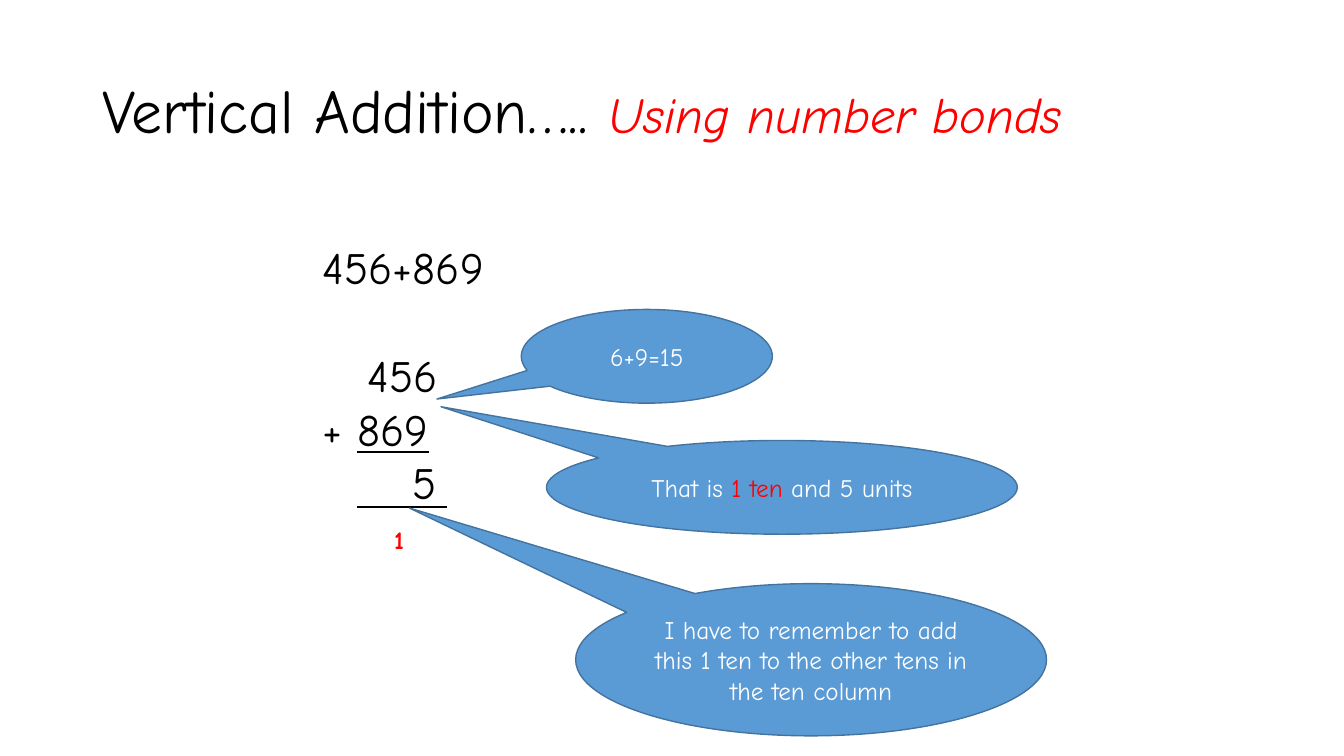
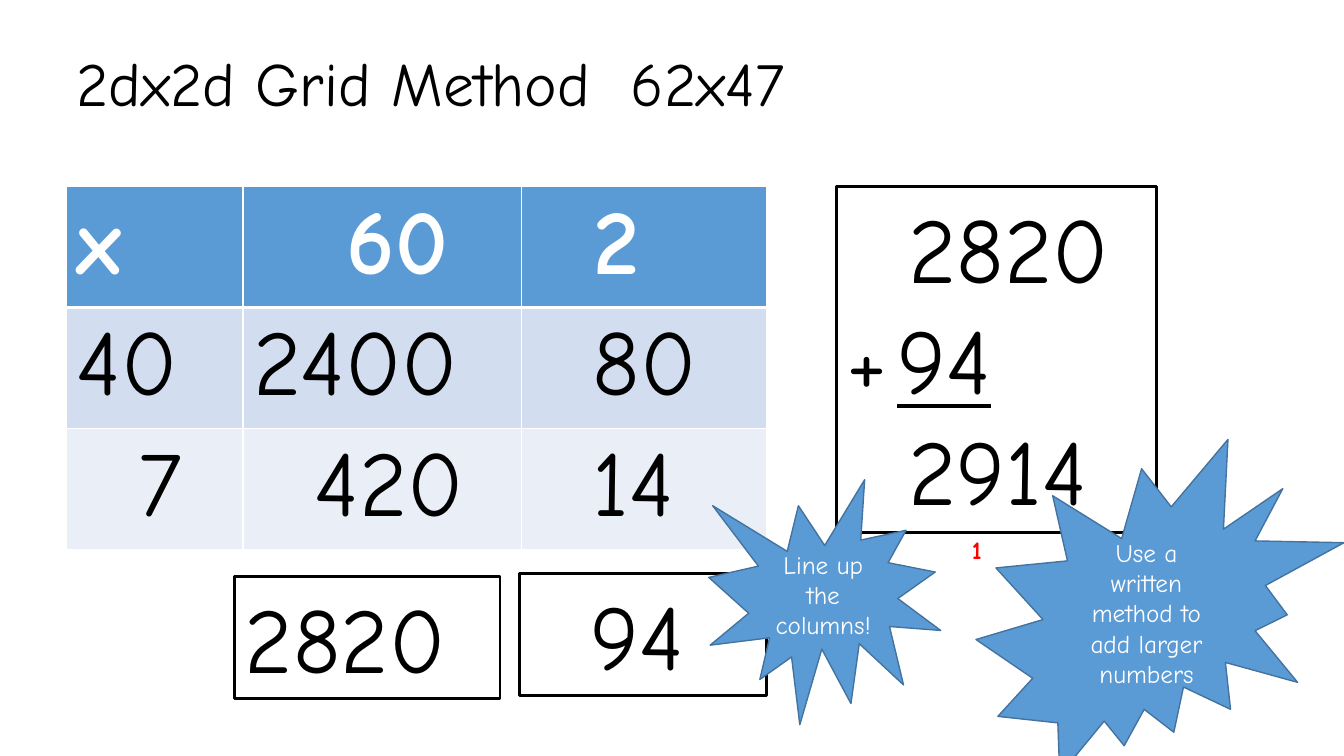
from dataclasses import dataclass

from lxml.etree import SubElement
from pptx import Presentation
from pptx.dml.color import RGBColor
from pptx.enum.shapes import MSO_CONNECTOR, MSO_SHAPE
from pptx.enum.text import MSO_ANCHOR, PP_ALIGN
from pptx.oxml.ns import qn
from pptx.util import Inches, Pt


@dataclass(frozen=True)
class Theme:
    font: str = "Comic Neue"
    black: str = "000000"
    white: str = "FFFFFF"
    red: str = "FF0000"
    blue: str = "5B9BD5"
    edge: str = "43739E"
    bands: tuple = ("5B9BD5", "D2DEEF", "EAEFF7")
    title: int = 44
    subtitle: int = 36
    sum: int = 32
    note: int = 18
    digits: int = 66


THEME = Theme()
STEP = 0.61

BONDS_TITLE = [
    "Vertical Addition….. ",
    ("Using number bonds", {"size": THEME.subtitle, "color": THEME.red, "italic": True}),
]
BONDS_SUM = [
    {"runs": ["456+869"]},
    {"runs": ["456"], "indent": 0.45, "before": 38.6},
    {"runs": ["+ ", ("869", {"underline": True})]},
    {"runs": ["5"], "indent": 0.89},
]
CALLOUTS = [
    ((5.17, 3.07, 2.49, 0.93), (-0.836, 0.456), ["6+9=15"]),
    ((5.42, 4.37, 4.67, 0.93), (-0.724, -0.86),
     ["That is ", ("1 ten ", {"color": THEME.red}), "and 5 units"]),
    ((5.71, 5.79, 4.67, 1.51), (-0.853, -0.997),
     ["I have to remember to add this 1 ten to the other tens in the ten column"]),
]

GRID_TITLE = ["2dx2d Grid Method\t62x47"]
GRID_COLUMNS = [1.75, 2.76, 2.43]
GRID_ROW = 1.15
GRID = [
    [("x", 0), ("60", 0.93), ("2", 0.62)],
    [("40", 0), ("2400", 0), ("80", STEP)],
    [("7", STEP), ("420", STEP), ("14", STEP)],
]
TOTALS = [
    ((2.33, 5.72, 2.63, 1.21), [{"runs": ["2820"]}]),
    ((5.15, 5.69, 2.45, 1.21), [{"runs": ["94"], "indent": STEP}]),
    ((8.3, 1.85, 3.17, 3.43), [
        {"runs": ["2820"], "indent": STEP},
        {"runs": ["+", ("\t94", {"underline": True})], "tab": 1.93},
        {"runs": ["2914"], "indent": STEP},
    ]),
]
BURSTS = [
    (MSO_SHAPE.EXPLOSION1, (7.03, 4.76, 2.3, 2.43), ["Line up the columns!"]),
    (MSO_SHAPE.EXPLOSION2, (9.68, 4.36, 3.65, 3.33),
     ["Use a written method to add larger numbers"]),
]


def rgb(color):
    return RGBColor.from_string(color)


def inches(place):
    return [Inches(value) for value in place]


def write(frame, paras, size=THEME.note, color=THEME.black, bold=False,
          align=PP_ALIGN.LEFT, anchor=MSO_ANCHOR.TOP, spacing=None):
    frame.word_wrap = True
    frame.vertical_anchor = anchor
    for index, content in enumerate(paras):
        para = frame.paragraphs[0] if index == 0 else frame.add_paragraph()
        para.alignment = align
        para.line_spacing = spacing
        para.space_before = Pt(content.get("before", 0))
        properties = para._p.get_or_add_pPr()
        properties.set("marL", str(Inches(content.get("indent", 0))))
        properties.set("indent", "0")
        if "tab" in content:
            stops = SubElement(properties, qn("a:tabLst"))
            SubElement(stops, qn("a:tab"), pos=str(Inches(content["tab"])), algn="l")
        for run in content["runs"]:
            text, style = (run, {}) if isinstance(run, str) else run
            span = para.add_run()
            span.text = text
            span.font.name = THEME.font
            span.font.size = Pt(style.get("size", size))
            span.font.color.rgb = rgb(style.get("color", color))
            span.font.bold = bold
            span.font.italic = style.get("italic", False)
            span.font.underline = style.get("underline", False)


def add_text(page, place, paras, **style):
    box = page.shapes.add_textbox(*inches(place))
    write(box.text_frame, paras, **style)


def add_title(page, left, top, runs, **layout):
    add_text(page, (left, top, 11.5, 1.45), [{"runs": runs, **layout}],
             size=THEME.title, anchor=MSO_ANCHOR.MIDDLE, spacing=0.9)


def add_carry(page, left, top):
    add_text(page, (left, top, 0.35, 0.4), [{"runs": ["1"]}], color=THEME.red, bold=True)


def add_box(page, kind, place, paras, fill, line, width, **style):
    shape = page.shapes.add_shape(kind, *inches(place))
    shape.shadow.inherit = False
    if fill:
        shape.fill.solid()
        shape.fill.fore_color.rgb = rgb(fill)
    else:
        shape.fill.background()
    shape.line.color.rgb = rgb(line)
    shape.line.width = Pt(width)
    write(shape.text_frame, paras, **style)
    return shape


def add_note(page, kind, place, runs):
    return add_box(page, kind, place, [{"runs": runs}], THEME.blue, THEME.edge, 1,
                   color=THEME.white, align=PP_ALIGN.CENTER, anchor=MSO_ANCHOR.MIDDLE)


def add_rule(page, left, right, top):
    rule = page.shapes.add_connector(MSO_CONNECTOR.STRAIGHT, *inches((left, top, right, top)))
    rule.line.color.rgb = rgb(THEME.black)
    rule.line.width = Pt(1.75)
    SubElement(rule._element.spPr, qn("a:effectLst"))


def set_borders(cell, widths):
    properties = cell._tc.get_or_add_tcPr()
    for index, (side, width) in enumerate(widths.items()):
        border = SubElement(properties, qn(f"a:ln{side}"), w=str(Pt(width)))
        fill = SubElement(border, qn("a:solidFill"))
        SubElement(fill, qn("a:srgbClr"), val=THEME.white)
        properties.insert(index, border)


def add_grid(page, left, top):
    place = (left, top, sum(GRID_COLUMNS), GRID_ROW * len(GRID))
    table = page.shapes.add_table(len(GRID), len(GRID_COLUMNS), *inches(place)).table
    for column, width in zip(table.columns, GRID_COLUMNS):
        column.width = Inches(width)
    for row, values in enumerate(GRID):
        header = row == 0
        table.rows[row].height = Inches(GRID_ROW)
        for column, (text, indent) in enumerate(values):
            cell = table.cell(row, column)
            cell.fill.solid()
            cell.fill.fore_color.rgb = rgb(THEME.bands[row])
            set_borders(cell, {"L": 1, "R": 1, "T": 3 if row == 1 else 1, "B": 3 if header else 1})
            write(cell.text_frame, [{"runs": [text], "indent": indent}], size=THEME.digits,
                  color=THEME.white if header else THEME.black, bold=header)


def build_bonds(page):
    add_title(page, 0.92, 0.4, BONDS_TITLE)
    add_text(page, (3.1, 2.33, 2.22, 3.33), BONDS_SUM, size=THEME.sum)
    add_carry(page, 3.81, 5.15)
    add_rule(page, 3.54, 4.43, 5.03)
    for place, tip, runs in CALLOUTS:
        callout = add_note(page, MSO_SHAPE.OVAL_CALLOUT, place, runs)
        callout.adjustments[0], callout.adjustments[1] = tip


def build_grid(page):
    add_title(page, 0.66, 0.13, GRID_TITLE, tab=5.48)
    add_grid(page, 0.66, 1.85)
    for place, paras in TOTALS:
        add_box(page, MSO_SHAPE.RECTANGLE, place, paras, None, THEME.black, 2,
                size=THEME.digits)
    for kind, place, runs in BURSTS:
        add_note(page, kind, place, runs)
    add_carry(page, 9.54, 5.25)


def main():
    deck = Presentation()
    deck.slide_width, deck.slide_height = Inches(13.33), Inches(7.5)
    for build in (build_bonds, build_grid):
        build(deck.slides.add_slide(deck.slide_layouts[6]))
    deck.save("out.pptx")


if __name__ == "__main__":
    main()
